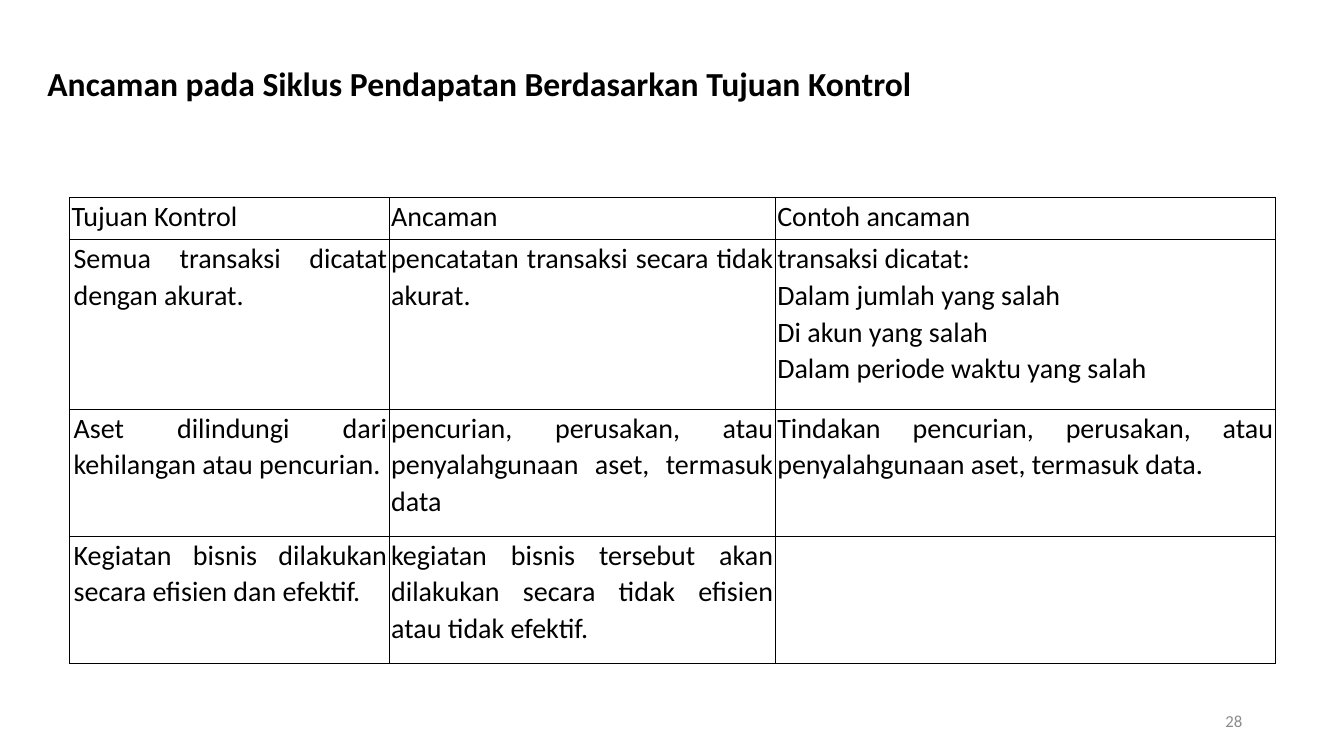
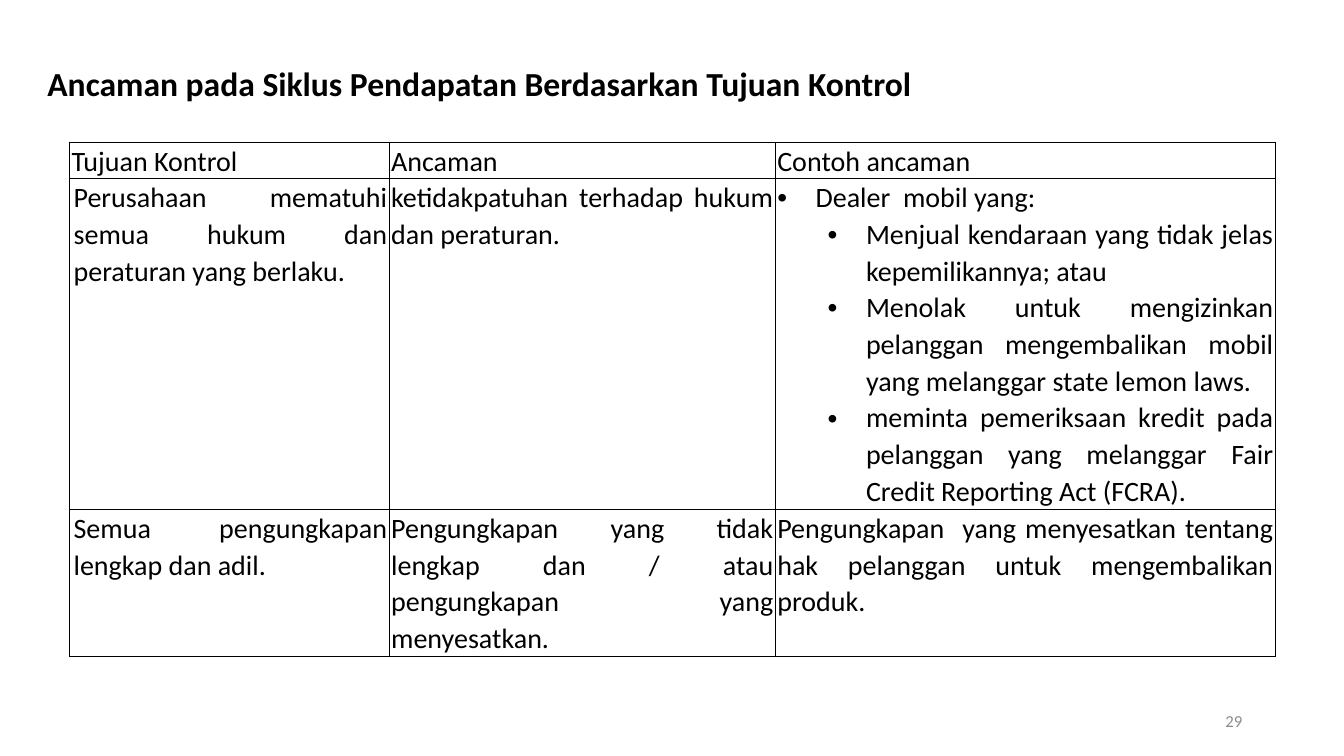
"""Build two slides that list threats to the revenue cycle by control objective."""
import collections

import lxml.etree
import pptx
import pptx.dml.color
import pptx.enum.text
import pptx.oxml.ns
import pptx.util

Inches = pptx.util.Inches
Pt = pptx.util.Pt
RGBColor = pptx.dml.color.RGBColor
Align = pptx.enum.text.PP_ALIGN
Anchor = pptx.enum.text.MSO_ANCHOR

BLACK = RGBColor(0x00, 0x00, 0x00)
GREY = RGBColor(0x8C, 0x8C, 0x8C)

TITLE = "Ancaman pada Siklus Pendapatan Berdasarkan Tujuan Kontrol"
HEADER = ("Tujuan Kontrol", "Ancaman", "Contoh ancaman")
COLUMN_WIDTHS = (3.17, 3.83, 4.96)
TABLE_LEFT = 0.69
BULLET_STEP = 0.5
BULLET_HANG = 0.38

TITLE_FONT = {"name": "Calibri", "size": Pt(24), "bold": True}
TABLE_FONT = {"name": "Calibri", "size": Pt(20), "bold": False}
NUMBER_FONT = {"name": "Calibri", "size": Pt(12), "bold": False}
TITLE_PARAGRAPH = {"alignment": Align.LEFT, "line_spacing": 0.9}
TABLE_PARAGRAPH = {"alignment": Align.JUSTIFY, "line_spacing": 1.07}
NUMBER_PARAGRAPH = {"alignment": Align.RIGHT}
TITLE_BOX = {"left": Inches(0.37), "top": Inches(0.49), "width": Inches(12.28), "height": Inches(0.71)}
CELL_MARGINS = {
    "margin_left": Inches(0.02),
    "margin_right": Inches(0.02),
    "margin_top": 0,
    "margin_bottom": 0,
}
TABLE_FLAGS = {"first_row": False, "horz_banding": False}

Bullet = collections.namedtuple("Bullet", "level text")
ThreatSlide = collections.namedtuple("ThreatSlide", "number top row_heights rows")

THREAT_SLIDES = (
    ThreatSlide(28, 1.96, (0.42, 1.68, 1.26, 1.26), (
        (
            "Semua transaksi dicatat dengan akurat.",
            "pencatatan transaksi secara tidak akurat.",
            ("transaksi dicatat:", "Dalam jumlah yang salah", "Di akun yang salah",
             "Dalam periode waktu yang salah"),
        ),
        (
            "Aset dilindungi dari kehilangan atau pencurian.",
            "pencurian, perusakan, atau penyalahgunaan aset, termasuk data",
            "Tindakan pencurian, perusakan, atau penyalahgunaan aset, termasuk data.",
        ),
        (
            "Kegiatan bisnis dilakukan secara efisien dan efektif.",
            "kegiatan bisnis tersebut akan dilakukan secara tidak efisien atau tidak efektif.",
            "",
        ),
    )),
    ThreatSlide(29, 1.41, (0.36, 3.28, 1.46), (
        (
            "Perusahaan mematuhi semua hukum dan peraturan yang berlaku.",
            "ketidakpatuhan terhadap hukum dan peraturan.",
            (
                Bullet(0, "Dealer  mobil yang:"),
                Bullet(1, "Menjual kendaraan yang tidak jelas kepemilikannya; atau"),
                Bullet(1, "Menolak untuk mengizinkan pelanggan mengembalikan mobil "
                          "yang melanggar state lemon laws."),
                Bullet(1, "meminta pemeriksaan kredit pada pelanggan yang melanggar "
                          "Fair Credit Reporting Act (FCRA)."),
            ),
        ),
        (
            "Semua pengungkapan lengkap dan adil.",
            "Pengungkapan yang tidak lengkap dan / atau pengungkapan yang menyesatkan.",
            "Pengungkapan  yang menyesatkan tentang hak pelanggan untuk mengembalikan produk.",
        ),
    )),
)


def apply_format(target, values):
    """Set each named attribute of the target."""
    for name, value in values.items():
        setattr(target, name, value)


def write_paragraph(paragraph, text, layout, font, color):
    """Fill a paragraph with formatted text."""
    paragraph.text = text
    apply_format(paragraph, layout)
    apply_format(paragraph.font, font)
    paragraph.font.color.rgb = color


def add_bullet(paragraph, level):
    """Give a paragraph a round bullet with a hanging indent."""
    properties = paragraph._p.get_or_add_pPr()
    properties.set("marL", str(Inches(BULLET_HANG + level * BULLET_STEP)))
    properties.set("indent", str(-Inches(BULLET_HANG)))
    for tag, name, value in (("a:buFont", "typeface", "Arial"), ("a:buChar", "char", "•")):
        lxml.etree.SubElement(properties, pptx.oxml.ns.qn(tag)).set(name, value)


def add_borders(cell):
    """Draw a thin black line on all four sides of a cell."""
    properties = cell._tc.get_or_add_tcPr()
    for side in ("a:lnL", "a:lnR", "a:lnT", "a:lnB"):
        line = lxml.etree.SubElement(properties, pptx.oxml.ns.qn(side), w=str(Pt(1)))
        fill = lxml.etree.SubElement(line, pptx.oxml.ns.qn("a:solidFill"))
        lxml.etree.SubElement(fill, pptx.oxml.ns.qn("a:srgbClr"), val=str(BLACK))


def write_cell(cell, content):
    """Format a cell and write its text, paragraphs or bullets."""
    apply_format(cell, CELL_MARGINS)
    add_borders(cell)
    cell.fill.background()
    items = (content,) if isinstance(content, str) else content
    for index, item in enumerate(items):
        paragraph = cell.text_frame.add_paragraph() if index else cell.text_frame.paragraphs[0]
        bulleted = isinstance(item, Bullet)
        text = item.text if bulleted else item
        write_paragraph(paragraph, text, TABLE_PARAGRAPH, TABLE_FONT, BLACK)
        if bulleted:
            add_bullet(paragraph, item.level)


def add_title(slide):
    """Place and format the title placeholder."""
    title = slide.shapes.title
    apply_format(title, TITLE_BOX)
    title.text_frame.vertical_anchor = Anchor.MIDDLE
    write_paragraph(title.text_frame.paragraphs[0], TITLE, TITLE_PARAGRAPH, TITLE_FONT, BLACK)


def add_threat_table(slide, content):
    """Add the table of objectives, threats and examples."""
    rows = (HEADER,) + content.rows
    frame = slide.shapes.add_table(
        len(rows), len(HEADER), Inches(TABLE_LEFT), Inches(content.top),
        Inches(sum(COLUMN_WIDTHS)), Inches(sum(content.row_heights)))
    table = frame.table
    apply_format(table, TABLE_FLAGS)
    for column, width in zip(table.columns, COLUMN_WIDTHS):
        column.width = Inches(width)
    for row, height, texts in zip(table.rows, content.row_heights, rows):
        row.height = Inches(height)
        for cell, text in zip(row.cells, texts):
            write_cell(cell, text)
    for row_index in range(1, len(rows)):
        table.cell(row_index, 0).margin_left = Inches(0.04)


def add_slide_number(slide, number):
    """Add the grey slide number at the bottom right."""
    box = slide.shapes.add_textbox(Inches(9.42), Inches(6.95), Inches(3), Inches(0.4))
    apply_format(box.text_frame, {"word_wrap": True, "vertical_anchor": Anchor.MIDDLE})
    write_paragraph(box.text_frame.paragraphs[0], str(number), NUMBER_PARAGRAPH, NUMBER_FONT, GREY)


def main():
    """Build and save the presentation."""
    presentation = pptx.Presentation()
    apply_format(presentation, {"slide_width": Inches(13.33), "slide_height": Inches(7.5)})
    title_only = presentation.slide_layouts.get_by_name("Title Only")
    for content in THREAT_SLIDES:
        slide = presentation.slides.add_slide(title_only)
        add_title(slide)
        add_threat_table(slide, content)
        add_slide_number(slide, content.number)
    presentation.save("out.pptx")


if __name__ == "__main__":
    main()
